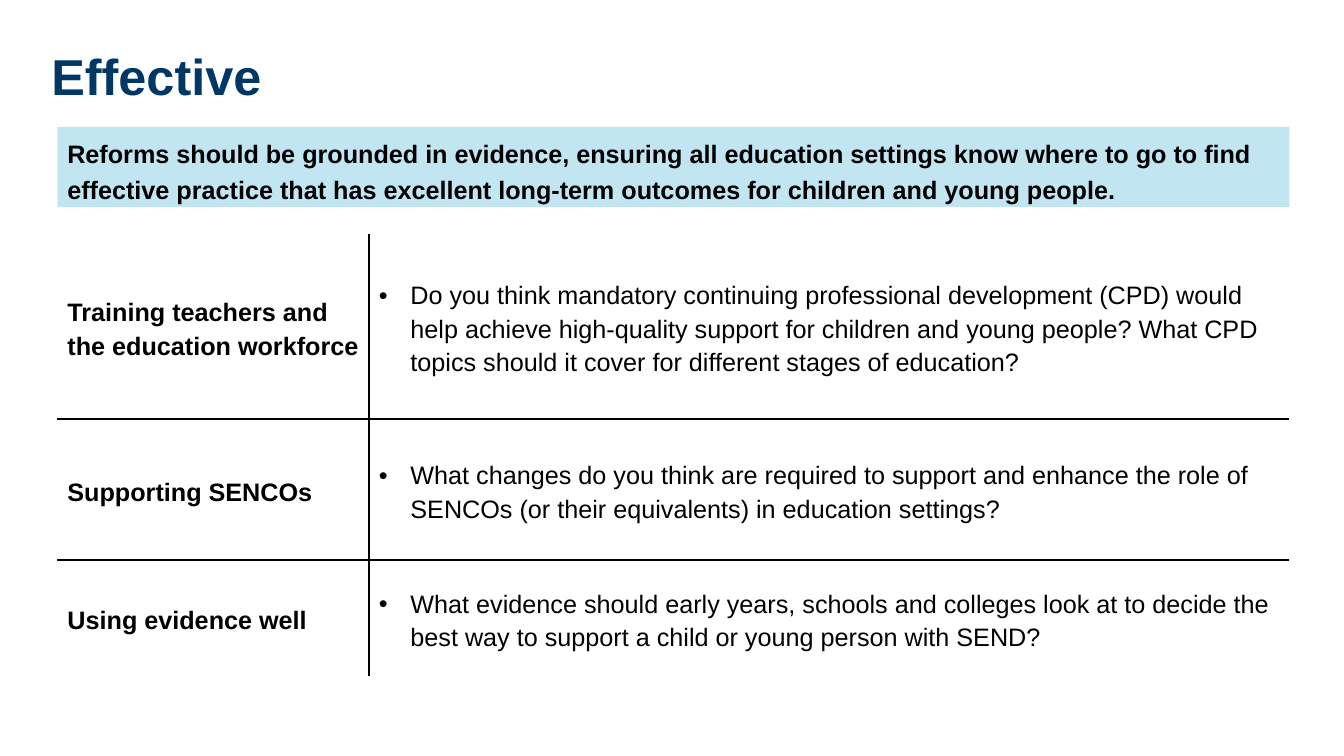
import pptx
import pptx.util
import pptx.dml.color
import pptx.enum.shapes
import pptx.enum.text
import pptx.oxml
import pptx.oxml.ns
from lxml import etree

Pt = pptx.util.Pt
FONT = "Arial"
COLORS = {"title": "003764", "banner": "C2E5F2", "text": "000000", "cell": "FFFFFF"}
LEFT, WIDTH = 41, 880
COLUMN_WIDTHS = [222.5, 657.5]
ROW_HEIGHTS = [132.5, 100.8, 82.8]
BORDER_WIDTH = 1.5

BANNER = (
    "Reforms should be grounded in evidence, ensuring all education settings know "
    "where to go to find effective practice that has excellent long-term outcomes "
    "for children and young people."
)
TOPICS = [
    ("Training teachers and the education workforce",
     "Do you think mandatory continuing professional development (CPD) would help "
     "achieve high-quality support for children and young people? What CPD topics "
     "should it cover for different stages of education?"),
    ("Supporting SENCOs",
     "What changes do you think are required to support and enhance the role of "
     "SENCOs (or their equivalents) in education settings?"),
    ("Using evidence well",
     "What evidence should early years, schools and colleges look at to decide the "
     "best way to support a child or young person with SEND?"),
]


def rgb(name):
    return pptx.dml.color.RGBColor.from_string(COLORS[name])


def write_text(tf, text, size=18, color="text", bold=False, spacing=1.2):
    tf.text = text
    p = tf.paragraphs[0]
    p.alignment = pptx.enum.text.PP_ALIGN.LEFT
    p.line_spacing = spacing
    font = p.runs[0].font
    font.name, font.size, font.bold = FONT, Pt(size), bold
    font.color.rgb = rgb(color)
    return p


def add_bullet(p, indent=22.5):
    pPr = p._p.get_or_add_pPr()
    pPr.set("marL", str(Pt(indent)))
    pPr.set("indent", str(-Pt(indent)))
    qn = pptx.oxml.ns.qn
    etree.SubElement(pPr, qn("a:buFont"), typeface=FONT)
    etree.SubElement(pPr, qn("a:buChar"), char="•")


def set_borders(cell, visible):
    """Draw the named sides (L, R, T, B) and clear the others."""
    qn = pptx.oxml.ns.qn
    tcPr = cell._tc.get_or_add_tcPr()
    for side in "LRTB":
        ln = etree.SubElement(tcPr, qn("a:ln" + side), w=str(Pt(BORDER_WIDTH)))
        if side in visible:
            fill = etree.SubElement(ln, qn("a:solidFill"))
            etree.SubElement(fill, qn("a:srgbClr"), val=COLORS["text"])
        else:
            etree.SubElement(ln, qn("a:noFill"))


def set_title(s, text):
    title = s.shapes.title
    title.left, title.top, title.width, title.height = Pt(29.5), Pt(28), Pt(901.5), Pt(51)
    title.text_frame.vertical_anchor = pptx.enum.text.MSO_ANCHOR.MIDDLE
    write_text(title.text_frame, text, size=36, color="title", bold=True, spacing=1.0)


def add_banner(s, text):
    sp = s.shapes.add_shape(pptx.enum.shapes.MSO_SHAPE.RECTANGLE,
                            Pt(LEFT), Pt(90.7), Pt(WIDTH), Pt(57))
    sp.shadow.inherit = False
    sp.fill.solid()
    sp.fill.fore_color.rgb = rgb("banner")
    sp.line.fill.background()
    sp.text_frame.word_wrap = True
    sp.text_frame.vertical_anchor = pptx.enum.text.MSO_ANCHOR.TOP
    write_text(sp.text_frame, text, bold=True)


def add_topic_table(s, topics):
    table = s.shapes.add_table(len(topics), 2, Pt(LEFT), Pt(167),
                               Pt(WIDTH), Pt(sum(ROW_HEIGHTS))).table
    table.first_row = table.horz_banding = False
    for column, width in zip(table.columns, COLUMN_WIDTHS):
        column.width = Pt(width)
    for i, (row, height) in enumerate(zip(table.rows, ROW_HEIGHTS)):
        row.height = Pt(height)
        # Only the lines between cells show
        rules = ("T" if i > 0 else "") + ("B" if i < len(topics) - 1 else "")
        for j, cell in enumerate(row.cells):
            set_borders(cell, rules + "RL"[j])
            cell.fill.solid()
            cell.fill.fore_color.rgb = rgb("cell")
            cell.vertical_anchor = pptx.enum.text.MSO_ANCHOR.MIDDLE
            p = write_text(cell.text_frame, topics[i][j], bold=j == 0)
            if j == 1:
                add_bullet(p)


def main():
    prs = pptx.Presentation()
    prs.slide_width, prs.slide_height = Pt(960), Pt(540)
    s = prs.slides.add_slide(prs.slide_layouts[5])  # title only
    set_title(s, "Effective")
    add_banner(s, BANNER)
    add_topic_table(s, TOPICS)
    prs.save("out.pptx")


if __name__ == "__main__":
    main()
